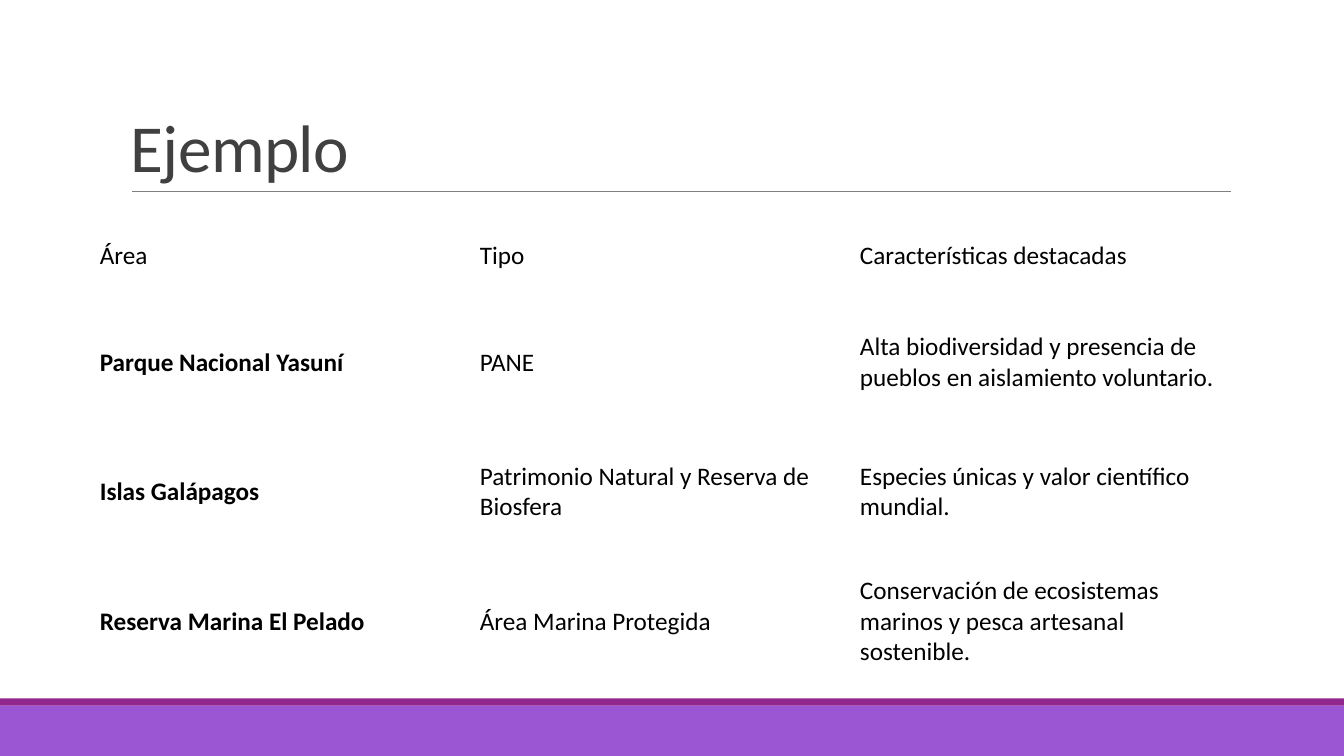
from pptx import Presentation
from pptx.dml.color import RGBColor
from pptx.enum.shapes import MSO_CONNECTOR as Link, MSO_SHAPE as Shape
from pptx.enum.text import MSO_ANCHOR as Anchor
from pptx.oxml.ns import qn
from pptx.util import Inches, Pt
from lxml import etree

COLORS = {"footer": "9B57D3", "stripe": "92278F", "rule": "808080",
          "title": "404040", "text": "000000"}
WIDTH, HEIGHT = 13.33, 7.5
FOOTER_TOP, STRIPE_TOP = 7, 6.93
RULE_LEFT, RULE_RIGHT, RULE_Y = 1.31, 12.21, 1.9
TABLE_LEFT, TABLE_TOP, COLUMN_WIDTH = 0.89, 2.24, 3.77
ROW_HEIGHTS = [0.6, 1.51, 1.06, 1.51]
ROWS = [
    ["Área", "Tipo", "Características destacadas"],
    ["Parque Nacional Yasuní", "PANE",
     "Alta biodiversidad y presencia de pueblos en aislamiento voluntario."],
    ["Islas Galápagos", "Patrimonio Natural y Reserva de Biosfera",
     "Especies únicas y valor científico mundial."],
    ["Reserva Marina El Pelado", "Área Marina Protegida",
     "Conservación de ecosistemas marinos y pesca artesanal sostenible."],
]


def add_span(para, text, size, color, bold=False):
    span = para.add_run()
    span.text = text
    span.font.name = "Calibri"
    span.font.size = Pt(size)
    span.font.bold = bold
    span.font.color.rgb = RGBColor.from_string(COLORS[color])
    return span


deck = Presentation()
deck.slide_width, deck.slide_height = Inches(WIDTH), Inches(HEIGHT)
page = deck.slides.add_slide(deck.slide_layouts[6])

for name, top, bottom in [("footer", FOOTER_TOP, HEIGHT), ("stripe", STRIPE_TOP, FOOTER_TOP)]:
    band = page.shapes.add_shape(Shape.RECTANGLE, 0, Inches(top),
                                 Inches(WIDTH), Inches(bottom - top))
    band.shadow.inherit = False
    band.fill.solid()
    band.fill.fore_color.rgb = RGBColor.from_string(COLORS[name])
    band.line.fill.background()

rule = page.shapes.add_connector(Link.STRAIGHT, Inches(RULE_LEFT), Inches(RULE_Y),
                                 Inches(RULE_RIGHT), Inches(RULE_Y))
rule.line.color.rgb = RGBColor.from_string(COLORS["rule"])
rule.line.width = Pt(0.5)
etree.SubElement(rule.element.spPr, qn("a:effectLst"))

title = page.shapes.add_textbox(Inches(1.2), Inches(0.31), Inches(11), Inches(1.59))
title.text_frame.word_wrap = True
title.text_frame.vertical_anchor = Anchor.BOTTOM
title_para = title.text_frame.paragraphs[0]
title_para.line_spacing = 0.85
title_span = add_span(title_para, "Ejemplo", 48, "title")
title_span.font._element.set("spc", "-50")

columns = len(ROWS[0])
table = page.shapes.add_table(len(ROWS), columns, Inches(TABLE_LEFT), Inches(TABLE_TOP),
                              Inches(columns * COLUMN_WIDTH), Inches(sum(ROW_HEIGHTS))).table
table.first_row = table.horz_banding = False
for column in table.columns:
    column.width = Inches(COLUMN_WIDTH)
for row_index, (texts, height) in enumerate(zip(ROWS, ROW_HEIGHTS)):
    table.rows[row_index].height = Inches(height)
    for column_index, text in enumerate(texts):
        cell = table.cell(row_index, column_index)
        cell.fill.background()
        cell.vertical_anchor = Anchor.MIDDLE
        add_span(cell.text_frame.paragraphs[0], text, 18, "text",
                 bold=row_index > 0 and column_index == 0)

deck.save("out.pptx")
